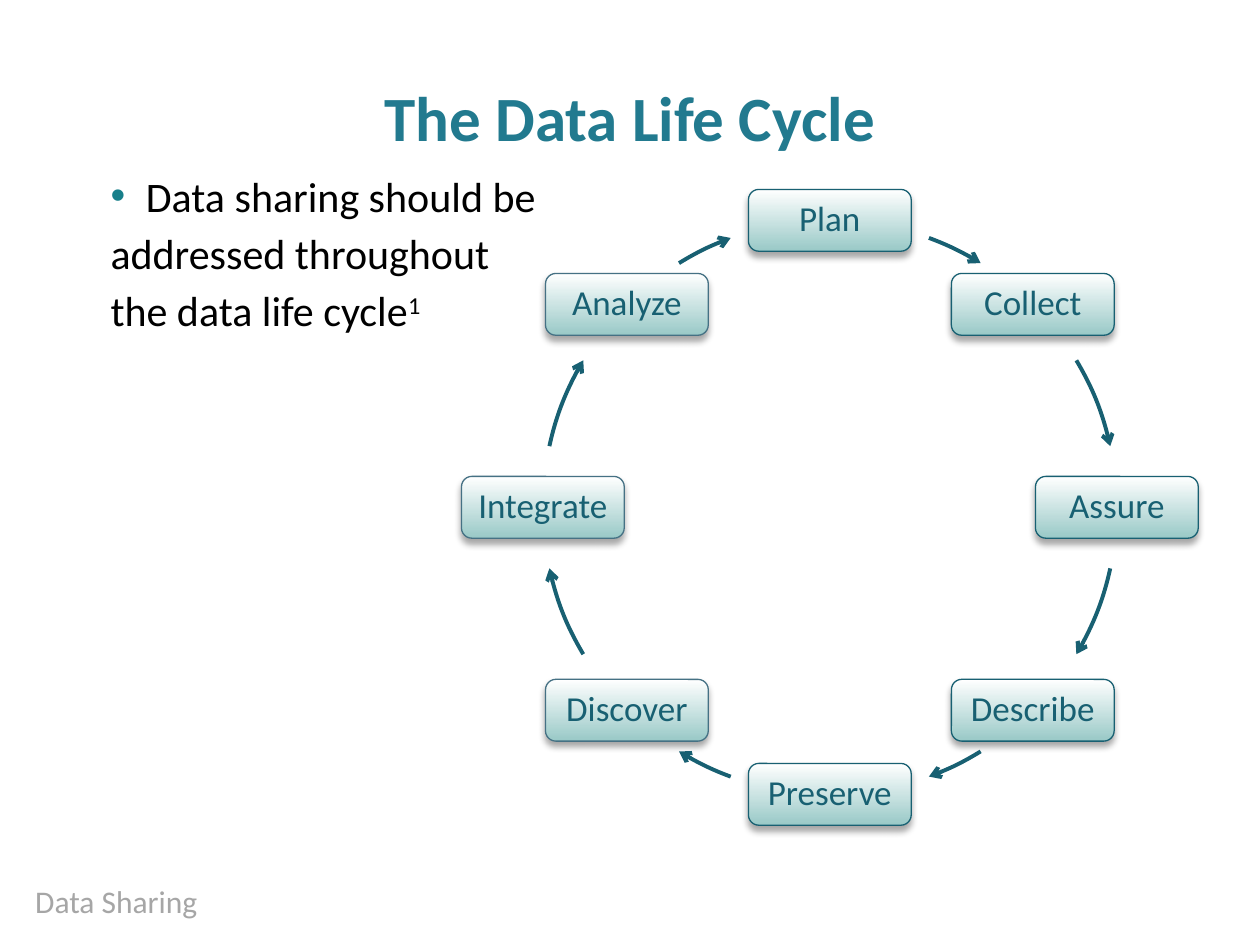
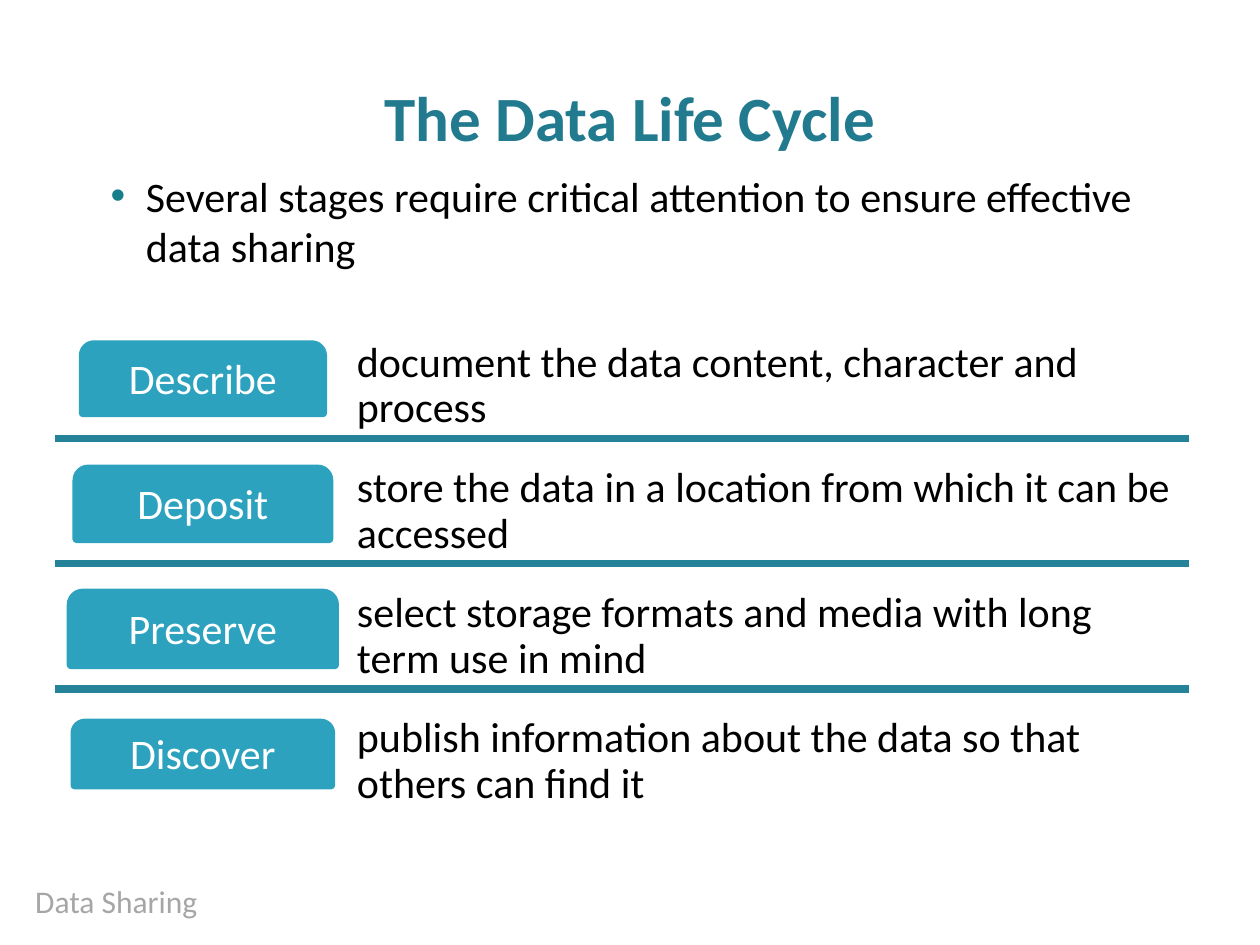
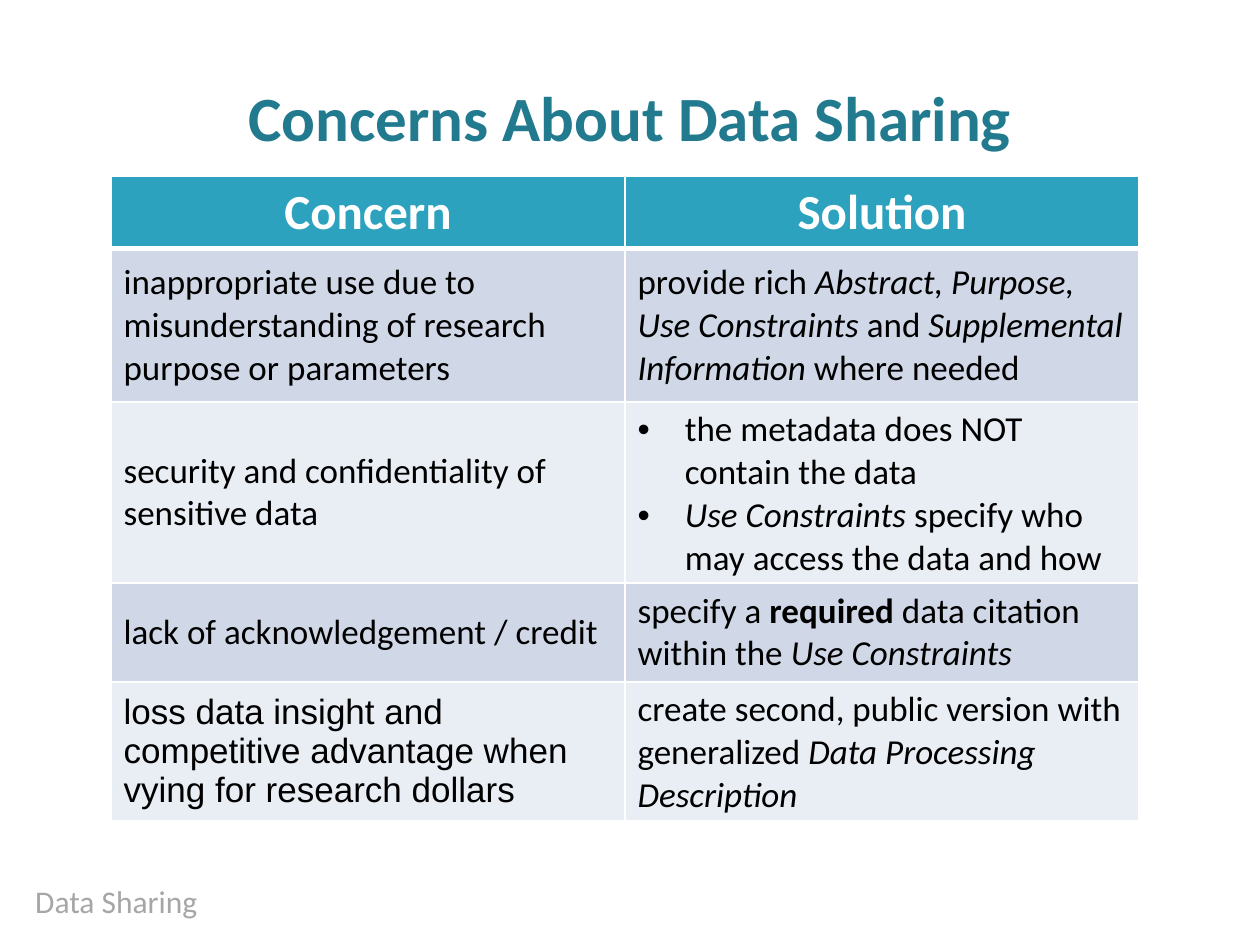
from pptx import Presentation
from pptx.dml.color import RGBColor
from pptx.enum.shapes import MSO_CONNECTOR, MSO_SHAPE as Shape
from pptx.enum.text import MSO_ANCHOR as Anchor, PP_ALIGN as Align
from pptx.oxml.ns import qn
from pptx.util import Pt
from lxml.etree import SubElement
from itertools import product
from math import cos, radians, sin

TITLE, FOOTER, BLACK, WHITE = "227A8F", "A6A6A6", "000000", "FFFFFF"
ACCENT, RULE, BULLET = "2DA2BF", "248299", "177F8A"
STAGE_INK, STAGE_EDGE_LEFT, STAGE_SHADE = "186072", "457184", "99C9C7"
BANDS = ["D0D8E8", "E9EDF4"]
BODY_BOX = (47.5, 93.6, 629.3, 373)
ITALIC, BOLD = {"italic": True}, {"bold": True}

STAGES = ["Plan", "Collect", "Assure", "Describe",
          "Preserve", "Discover", "Integrate", "Analyze"]
# Arrow spans in degrees clockwise from the top of the ring
QUARTER_SPANS = [(20.2, 31.7), (59.2, 77.7)]
HALF_SPANS = QUARTER_SPANS + [(180 - b, 180 - a) for a, b in reversed(QUARTER_SPANS)]

PRACTICES = [
    ("Describe", (137.5, 39.6), "document the data content, character and process"),
    ("Deposit", (144.7, 40.5), "store the data in a location from which it can be accessed"),
    ("Preserve", (151.2, 41.6), "select storage formats and media with long term use in mind"),
    ("Discover", (146.9, 36), "publish information about the data so that others can find it"),
]

# Each row: height, concern, concern font, solution paragraphs, bulleted paragraphs
CONCERNS = [
    (87.8, "inappropriate use due to misunderstanding of research purpose or parameters", "Calibri",
     [["provide rich ", ("Abstract, Purpose, Use Constraints ", ITALIC), "and ",
       ("Supplemental Information", ITALIC), " where needed"]], 0),
    (103, "security and confidentiality of sensitive data", "Calibri",
     ["the metadata does NOT contain the data",
      [("Use Constraints ", ITALIC), "specify who may access the data and how"]], 2),
    (56.8, "lack of acknowledgement / credit", "Calibri",
     [["specify a ", ("required", BOLD), " data citation within the ",
       ("Use Constraints", ITALIC)]], 0),
    (79.2, "loss data insight and competitive advantage when vying for research dollars", "Arial",
     [["create second, public version with generalized ",
       ("Data Processing Description", ITALIC)]], 0),
]


def rgb(value):
    return RGBColor.from_string(value)


def points(*values):
    return [Pt(value) for value in values]


def add_bullet(paragraph, color):
    props = paragraph._p.get_or_add_pPr()
    SubElement(SubElement(props, qn("a:buClr")), qn("a:srgbClr"), val=color)
    SubElement(props, qn("a:buFont"), typeface="Arial")
    SubElement(props, qn("a:buChar"), char="•")


def write(frame, paragraphs, size=24, color=BLACK, font="Calibri", bold=False,
          align=Align.LEFT, anchor=None, inset=None, spacing=None, before=0,
          indent=None, bullets=0, bullet_color=BLACK):
    """Fill a frame; a paragraph is a string or a list of strings and (text, format) runs."""
    if anchor is not None:
        frame.word_wrap = True
        frame.vertical_anchor = anchor
    if inset is not None:
        frame.margin_left = frame.margin_right = Pt(inset)
        frame.margin_top = frame.margin_bottom = Pt(inset)
    for index, content in enumerate(paragraphs):
        paragraph = frame.add_paragraph() if index else frame.paragraphs[0]
        paragraph.alignment = align
        if spacing:
            paragraph.line_spacing = spacing
        if index and before:
            paragraph.space_before = Pt(before)
        if indent:
            props = paragraph._p.get_or_add_pPr()
            props.set("marL", str(Pt(indent[0])))
            props.set("indent", str(Pt(indent[1])))
        if index < bullets:
            add_bullet(paragraph, bullet_color)
        for part in [content] if isinstance(content, str) else content:
            text, style = (part, {}) if isinstance(part, str) else part
            run = paragraph.add_run()
            run.text = text
            run.font.name, run.font.size = font, Pt(size)
            run.font.color.rgb = rgb(color)
            run.font.bold = style.get("bold", bold)
            run.font.italic = style.get("italic", False)
            if "raised" in style:
                run._r.get_or_add_rPr().set("baseline", str(style["raised"] * 1000))


def text_box(slide, box, paragraphs, anchor=Anchor.TOP, **style):
    frame = slide.shapes.add_textbox(*points(*box)).text_frame
    write(frame, paragraphs, anchor=anchor, **style)


def plain_shape(slide, kind, box, line, weight):
    shape = slide.shapes.add_shape(kind, *points(*box))
    shape.shadow.inherit = False
    shape.line.color.rgb = rgb(line)
    shape.line.width = Pt(weight)
    return shape


def new_slide(deck, title):
    slide = deck.slides.add_slide(deck.slide_layouts[6])
    text_box(slide, (13, 500.4, 301, 28.8), ["Data Sharing"], size=18, color=FOOTER)
    text_box(slide, (0, 38.9, 720, 55.4), [title], size=36, color=TITLE, bold=True,
             align=Align.CENTER, anchor=Anchor.MIDDLE)
    return slide


def body(slide, paragraphs):
    text_box(slide, BODY_BOX, paragraphs, before=4, indent=(28.8, -20.2),
             bullets=1, bullet_color=BULLET)


def stage_box(slide, name, center_x, center_y, edge):
    width, height = 93, 35.3
    box = (center_x - width / 2, center_y - height / 2, width, height)
    stage = plain_shape(slide, Shape.ROUNDED_RECTANGLE, box, edge, 0.75)
    stage.fill.gradient()
    stage.fill.gradient_angle = 270
    for stop, color in zip(stage.fill.gradient_stops, (WHITE, STAGE_SHADE)):
        stop.color.rgb = rgb(color)
    effects = stage._element.spPr.find(qn("a:effectLst"))
    shadow = SubElement(effects, qn("a:outerShdw"), blurRad=str(Pt(4)), dist=str(Pt(3)),
                        dir="5400000", rotWithShape="0")
    tone = SubElement(shadow, qn("a:srgbClr"), val=BLACK)
    SubElement(tone, qn("a:alpha"), val="35000")
    write(stage.text_frame, [name], size=20, color=STAGE_INK, align=Align.CENTER,
          anchor=Anchor.MIDDLE, spacing=0.9)


def ring_arrow(slide, ring, start, end):
    arrow = plain_shape(slide, Shape.ARC, ring, STAGE_INK, 2.25)
    arrow.fill.background()
    for index, angle in enumerate((start, end)):
        # Arc angles run from the right, in units of 1/60000 degree scaled by 100000
        arrow.adjustments[index] = (angle - 90) % 360 * 0.6
    SubElement(arrow.line._get_or_add_ln(), qn("a:tailEnd"), type="arrow")


def life_cycle(slide, ring):
    left, top, size, _ = ring
    radius = size / 2
    for index, name in enumerate(STAGES):
        angle = radians(index * 360 / len(STAGES))
        stage_box(slide, name, left + radius + radius * sin(angle),
                  top + radius - radius * cos(angle),
                  STAGE_EDGE_LEFT if index > len(STAGES) / 2 else STAGE_INK)
    for turn, (start, end) in product((0, 180), HALF_SPANS):
        ring_arrow(slide, ring, start + turn, end + turn)


def rule(slide, left, right, y):
    line = slide.shapes.add_connector(MSO_CONNECTOR.STRAIGHT, *points(left, y, right, y))
    line.line.color.rgb = rgb(RULE)
    line.line.width = Pt(4.33)
    SubElement(line._element.spPr, qn("a:effectLst"))


def practice_list(slide, box):
    left, top, width, height = box
    label_column, row_height = 168.5, 68.4
    pitch = (height - row_height) / (len(PRACTICES) - 1)
    for index, (name, (label_w, label_h), meaning) in enumerate(PRACTICES):
        row_top = top + index * pitch
        if index < len(PRACTICES) - 1:
            rule(slide, left, left + width, row_top + row_height)
        text_box(slide, (left + label_column, row_top, width - label_column, row_height),
                 [meaning], anchor=Anchor.BOTTOM, inset=3.8, spacing=0.9)
        label_box = (left + (label_column - label_w) / 2,
                     row_top + (row_height - label_h) / 2, label_w, label_h)
        label = plain_shape(slide, Shape.ROUND_2_SAME_RECTANGLE, label_box, ACCENT, 4.33)
        label.fill.solid()
        label.fill.fore_color.rgb = rgb(ACCENT)
        write(label.text_frame, [name], color=WHITE, align=Align.CENTER,
              anchor=Anchor.MIDDLE, inset=3.8, spacing=0.9)


def style_cell(cell, fill, top=1, bottom=1):
    """Give a cell its fill and white borders."""
    cell.fill.solid()
    cell.fill.fore_color.rgb = rgb(fill)
    props = cell._tc.get_or_add_tcPr()
    for index, (side, weight) in enumerate(zip("LRTB", (1, 1, top, bottom))):
        border = SubElement(props, qn("a:ln" + side), w=str(Pt(weight)))
        SubElement(SubElement(border, qn("a:solidFill")), qn("a:srgbClr"), val=WHITE)
        props.insert(index, border)


def concern_table(slide, box):
    table = slide.shapes.add_table(len(CONCERNS) + 1, 2, *points(*box)).table
    table.first_row = table.horz_banding = False
    header_height = box[3] - sum(row[0] for row in CONCERNS)
    table.rows[0].height = Pt(header_height)
    for column, heading in enumerate(["Concern", "Solution"]):
        cell = table.cell(0, column)
        style_cell(cell, ACCENT, bottom=3)
        write(cell.text_frame, [heading], size=28, color=WHITE, bold=True, align=Align.CENTER)
    for row, (height, concern, font, solution, bullets) in enumerate(CONCERNS, 1):
        table.rows[row].height = Pt(height)
        cells = [table.cell(row, column) for column in range(2)]
        for cell in cells:
            style_cell(cell, BANDS[(row - 1) % 2], top=3 if row == 1 else 1)
            cell.vertical_anchor = Anchor.MIDDLE
        write(cells[0].text_frame, [concern], size=20, font=font)
        write(cells[1].text_frame, solution, size=20, bullets=bullets,
              indent=(27, -27) if bullets else None)


def main():
    deck = Presentation()
    deck.slide_width, deck.slide_height = points(720, 540)

    cycle = new_slide(deck, "The Data Life Cycle")
    body(cycle, ["Data sharing should be", "addressed throughout",
                 ["the data life cycle", ("1", {"raised": 30})]])
    life_cycle(cycle, (310.2, 125.9, 328, 328))

    practices = new_slide(deck, "The Data Life Cycle")
    body(practices, ["Several stages require critical attention to ensure effective data sharing"])
    practice_list(practices, (31.7, 182.2, 648, 282.9))

    concerns = new_slide(deck, "Concerns About Data Sharing")
    concern_table(concerns, (63.4, 101, 587.5, 367.8))

    deck.save("out.pptx")


if __name__ == "__main__":
    main()
